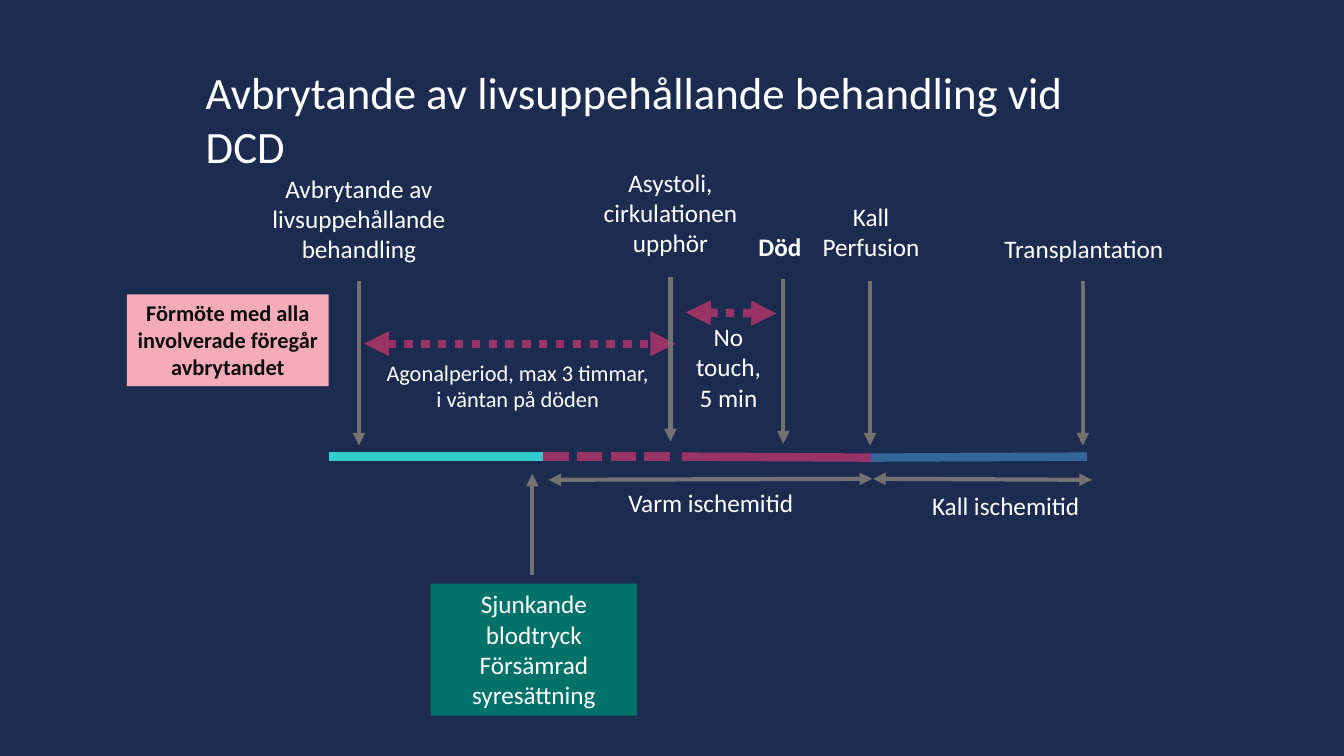
from pptx import Presentation
from pptx.dml.color import RGBColor
from pptx.enum.dml import MSO_LINE as Dash
from pptx.enum.shapes import MSO_CONNECTOR as Link, MSO_SHAPE as Shape
from pptx.enum.text import MSO_ANCHOR as Anchor, PP_ALIGN as Align
from pptx.oxml.ns import qn
from pptx.util import Inches, Pt
from lxml.etree import SubElement

NAVY = RGBColor(0x1C, 0x2C, 0x50)
WHITE = RGBColor(0xFF, 0xFF, 0xFF)
BLACK = RGBColor(0x0D, 0x0D, 0x0D)
GREY = RGBColor(0x76, 0x71, 0x71)
TURQUOISE = RGBColor(0x33, 0xCC, 0xCC)
PLUM = RGBColor(0x99, 0x33, 0x66)
BLUE = RGBColor(0x33, 0x66, 0x99)
GREEN = RGBColor(0x00, 0x72, 0x6A)
PINK = RGBColor(0xF5, 0xAC, 0xB8)


def write(box, text, size=18, color=WHITE, bold=False, align=Align.CENTER, anchor=Anchor.TOP):
    """Fill a box with text in the given format."""
    frame = box.text_frame
    frame.word_wrap = True
    frame.vertical_anchor = anchor
    frame.text = text
    for para in frame.paragraphs:
        para.alignment = align
        for span in para.runs:
            span.font.name = "Calibri"
            span.font.size = Pt(size)
            span.font.bold = bold
            span.font.color.rgb = color


class TimelinePage:
    """Draws the elements of a timeline on one slide."""

    def __init__(self, deck):
        self.page = deck.slides.add_slide(deck.slide_layouts[5])
        self.page.background.fill.solid()
        self.page.background.fill.fore_color.rgb = NAVY

    def title(self, text, *place):
        box = self.page.shapes.title
        box.left, box.top, box.width, box.height = map(Inches, place)
        write(box, text, size=32, align=Align.LEFT)

    def label(self, text, *place, **style):
        write(self.page.shapes.add_textbox(*map(Inches, place)), text, **style)

    def panel(self, text, *place, fill, **style):
        box = self.page.shapes.add_shape(Shape.RECTANGLE, *map(Inches, place))
        box.shadow.inherit = False
        box.fill.solid()
        box.fill.fore_color.rgb = fill
        box.line.fill.background()
        write(box, text, **style)

    def line(self, *ends, color=GREY, width=3, dash=None, arrows=()):
        link = self.page.shapes.add_connector(Link.STRAIGHT, *map(Inches, ends))
        link.line.color.rgb = color
        link.line.width = Pt(width)
        if dash:
            link.line.dash_style = dash
        properties = link._element.spPr
        for arrow in arrows:
            SubElement(properties.find(qn("a:ln")), qn(f"a:{arrow}"), type="triangle")
        SubElement(properties, qn("a:effectLst"))


def main():
    """Build and save the slide."""
    deck = Presentation()
    deck.slide_width, deck.slide_height = Inches(13.33), Inches(7.5)
    timeline = TimelinePage(deck)
    timeline.title("Avbrytande av livsuppehållande behandling vid DCD", 1.94, 0.59, 9.54, 0.64)

    phases = [
        (3.26, 4.53, 5.57, 4.53, TURQUOISE, None),
        (6.76, 4.53, 8.64, 4.54, PLUM, None),
        (8.64, 4.54, 10.78, 4.53, BLUE, None),
        (5.39, 4.53, 6.67, 4.53, PLUM, Dash.SQUARE_DOT),
    ]
    for *ends, color, dash in phases:
        timeline.line(*ends, color=color, width=6, dash=dash)

    both = ("headEnd", "tailEnd")
    for ends in [(3.61, 3.41, 6.7, 3.41), (6.8, 3.1, 7.7, 3.11)]:
        timeline.line(*ends, color=PLUM, width=6, dash=Dash.ROUND_DOT, arrows=both)
    for ends in [(5.44, 4.76, 8.65, 4.75), (8.66, 4.75, 10.83, 4.76)]:
        timeline.line(*ends, arrows=both)
    for x, top in [(3.56, 2.79), (6.65, 2.75), (7.77, 2.77), (8.63, 2.79), (10.74, 2.79)]:
        timeline.line(x, top, x, top + 1.63, arrows=["tailEnd"])
    timeline.line(5.28, 5.7, 5.28, 4.7, arrows=["tailEnd"])

    labels = [
        ("Avbrytande av livsuppehållande behandling", 2.56, 1.67, 2, 1.01),
        ("Asystoli, cirkulationen upphör", 5.77, 1.61, 1.76, 1.01),
        ("Kall Perfusion", 7.86, 1.95, 1.56, 0.71),
        ("Transplantation", 9.74, 2.27, 2.02, 0.4),
        ("No touch,\v5 min", 6.67, 3.14, 1.11, 1.01),
        ("Varm ischemitid", 5.3, 4.79, 3.5, 0.4),
        ("Kall ischemitid", 9.01, 4.82, 1.93, 0.4),
    ]
    for text, *place in labels:
        timeline.label(text, *place)
    timeline.label("Död", 6.9, 2.25, 1.67, 0.4, bold=True)
    timeline.label("Agonalperiod, max 3 timmar,\ni väntan på döden", 3.52, 3.51, 3.23, 0.64, size=16)

    timeline.panel("Sjunkande blodtryck\nFörsämrad syresättning", 4.27, 5.79, 2.05, 1.31, fill=GREEN)
    timeline.panel("Förmöte med alla involverade föregår\navbrytandet", 1.26, 2.92, 2, 0.91,
                   fill=PINK, size=16, color=BLACK, bold=True)
    deck.save("out.pptx")


if __name__ == "__main__":
    main()
